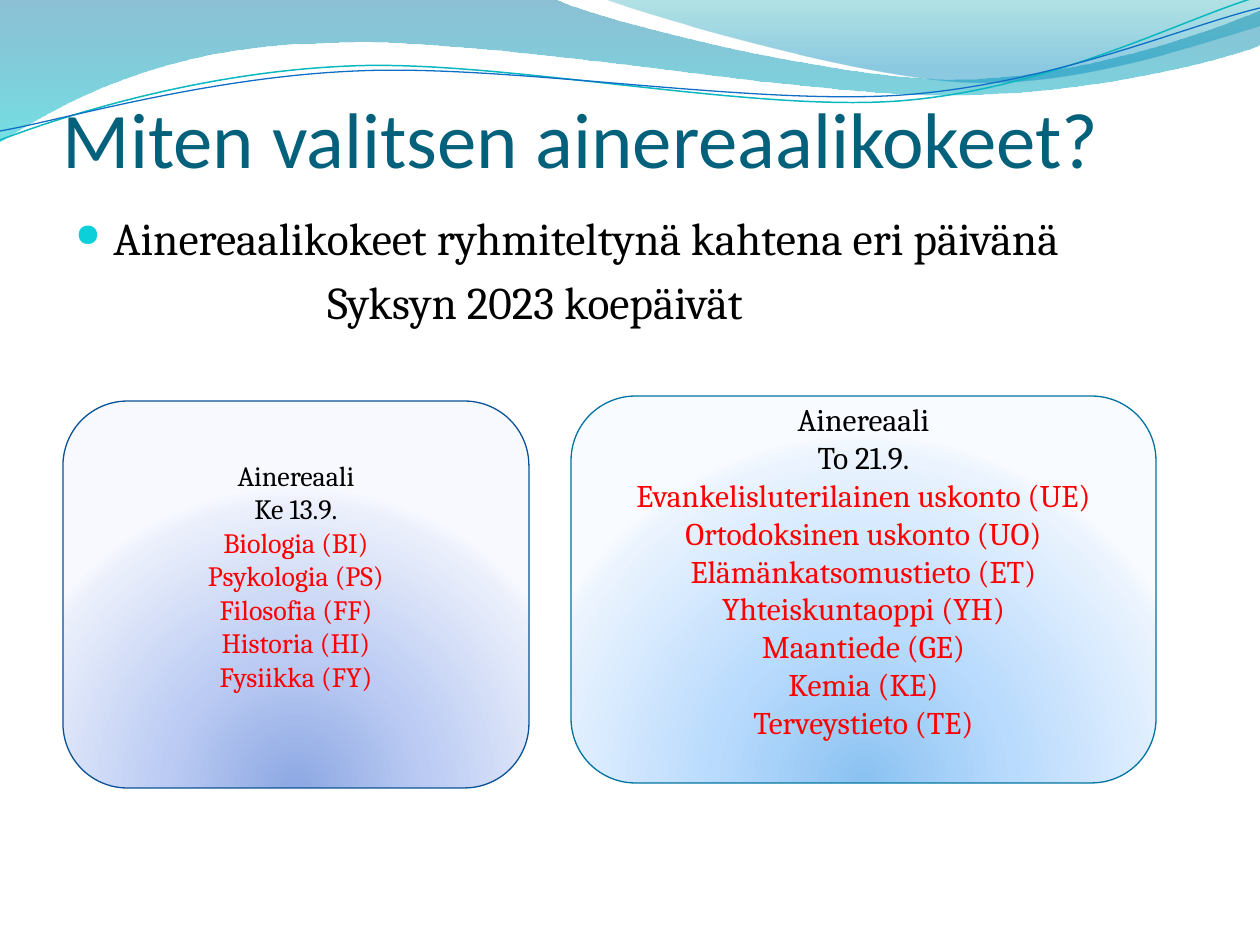
from lxml.etree import SubElement
from pptx import Presentation
from pptx.dml.color import RGBColor as RGB
from pptx.enum.shapes import MSO_SHAPE as SHAPE
from pptx.enum.text import MSO_ANCHOR as ANCHOR, PP_ALIGN as ALIGN
from pptx.oxml import parse_xml
from pptx.oxml.ns import nsdecls, qn
from pptx.util import Pt

PX = 914400 / 126

BLACK = RGB(0x00, 0x00, 0x00)
RED = RGB(0xFF, 0x00, 0x00)
TEAL = RGB(0x04, 0x61, 0x7B)
AQUA = RGB(0x0B, 0xD0, 0xD9)
NAVY = RGB(0x09, 0x52, 0x95)
SEA = RGB(0x00, 0x74, 0xA1)
CYAN = RGB(0x00, 0xC6, 0xCF)
GREEN = RGB(0x00, 0xA1, 0xA9)
BLUE = RGB(0x00, 0x8B, 0xBF)
THREAD_1 = RGB(0x0A, 0xB8, 0xBF)
THREAD_2 = RGB(0x0F, 0x6F, 0xC6)
LILAC = [RGB(0x8D, 0xA8, 0xE3), RGB(0xBB, 0xCB, 0xF3),
         RGB(0xEA, 0xEF, 0xFB), RGB(0xF7, 0xF9, 0xFF)]
SKY = [RGB(0x8B, 0xC2, 0xF1), RGB(0xB9, 0xDB, 0xFD),
       RGB(0xEA, 0xF3, 0xFE), RGB(0xF8, 0xFB, 0xFF)]

TITLE = "Miten valitsen ainereaalikokeet?"
BULLET = "Ainereaalikokeet ryhmiteltynä kahtena eri päivänä"
DATES = "Syksyn 2023 koepäivät"

# Outlines: a pair is a straight step, six numbers are a Bezier curve.
# Gradient stops: position %, colour, opacity %.
WAVES = [
    ([(0, 0), (554, -1), (600, 21, 837, 79, 955, 79),
      (1075, 79, 1207, 33, 1260, 11), (1261, 45),
      (1239, 55, 1096, 96, 940, 95), (784, 94, 481, 35, 324, 43),
      (163, 45, 58, 105, -1, 142)],
     [(0, SEA, 45), (100, CYAN, 55)]),
    ([(604, -1), (641, 14, 859, 78, 969, 82),
      (1079, 87, 1211, 40, 1260, 26), (1260, 0)],
     [(0, GREEN, 30), (80, BLUE, 45)]),
]
THREADS = [
    ([(0, 140), (60, 117, 199, 72, 349, 66), (498, 59, 747, 112, 898, 101),
      (1049, 90, 1182, 19, 1257, -3)], THREAD_1, 0.85),
    ([(0, 131), (59, 121, 207, 77, 357, 71), (508, 64, 752, 106, 903, 95),
      (1053, 84, 1185, 26, 1260, 8)], THREAD_2, 0.75),
]
CARDS = [
    ((571, 396, 585, 387), SKY, SEA, 18, ["Ainereaali", "To 21.9."],
     ["Evankelisluterilainen uskonto (UE)", "Ortodoksinen uskonto (UO)",
      "Elämänkatsomustieto (ET)", "Yhteiskuntaoppi (YH)", "Maantiede (GE)",
      "Kemia (KE)", "Terveystieto (TE)"]),
    ((63, 401, 466, 387), LILAC, NAVY, 16, ["Ainereaali", "Ke 13.9."],
     ["Biologia (BI)", "Psykologia (PS)", "Filosofia (FF)",
      "Historia (HI)", "Fysiikka (FY)"]),
]
LINEAR = '<a:lin ang="5400000" scaled="0"/>'
GLOW = ('<a:path path="circle"><a:fillToRect l="50000" t="130000" '
        'r="50000" b="-30000"/></a:path>')


def emu(*nums):
    return [round(n * PX) for n in nums]


def draw(slide, steps, close):
    """Join the steps' end points, then bend the curved ones."""
    ends = [tuple(emu(*step[-2:])) for step in steps]
    pen = slide.shapes.build_freeform(*ends[0])
    pen.add_line_segments(ends[1:], close=close)
    shape = pen.convert_to_shape()
    shape.shadow.inherit = False
    shape.fill.background()
    sides = list(shape._element.iter(qn("a:lnTo")))
    for side, step in zip(sides, steps[1:]):
        if len(step) == 2:
            continue
        side.tag = qn("a:cubicBezTo")
        end = side[0]
        for i in (0, 2):
            x, y = emu(*step[i:i + 2])
            end.addprevious(parse_xml(
                f'<a:pt {nsdecls("a")} x="{x - shape.left}" '
                f'y="{y - shape.top}"/>'))
    return shape


def shade(shape, stops, kind):
    """Give the shape a gradient fill with opacity."""
    marks = "".join(
        f'<a:gs pos="{pos * 1000}"><a:srgbClr val="{color}">'
        f'<a:alpha val="{alpha * 1000}"/></a:srgbClr></a:gs>'
        for pos, color, alpha in stops)
    shape.fill.background()
    props = shape._element.spPr
    props.replace(props.find(qn("a:noFill")), parse_xml(
        f'<a:gradFill {nsdecls("a")} rotWithShape="1">'
        f'<a:gsLst>{marks}</a:gsLst>{kind}</a:gradFill>'))


def write(para, text, face, size, color):
    para.text = text
    font = para.font
    font.name, font.size, font.color.rgb = face, Pt(size), color


def add_text(slide, box):
    frame = slide.shapes.add_textbox(*emu(*box)).text_frame
    frame.word_wrap = True
    return frame


def indent(para, left, first=0):
    props = para._p.get_or_add_pPr()
    props.set("marL", str(emu(left)[0]))
    props.set("indent", str(emu(first)[0]))
    return props


def add_bullet(para, color):
    props = indent(para, 38, -38)
    tint = SubElement(props, qn("a:buClr"))
    SubElement(tint, qn("a:srgbClr"), val=str(color))
    SubElement(props, qn("a:buSzPct"), val="70000")
    SubElement(props, qn("a:buChar"), char="●")


def add_card(slide, box, tints, edge, size, head, exams):
    card = slide.shapes.add_shape(SHAPE.ROUNDED_RECTANGLE, *emu(*box))
    card.shadow.inherit = False
    shade(card, [(pos, tint, 100) for pos, tint in zip((0, 43, 93, 100), tints)],
          GLOW)
    card.line.color.rgb, card.line.width = edge, Pt(0.75)
    frame = card.text_frame
    frame.word_wrap = True
    frame.vertical_anchor = ANCHOR.MIDDLE
    frame.margin_bottom = emu(44)[0]
    for i, text in enumerate(head + exams):
        para = frame.add_paragraph() if i else frame.paragraphs[0]
        para.alignment = ALIGN.CENTER
        write(para, text, "Cambria", size, BLACK if i < len(head) else RED)


def main():
    deck = Presentation()
    deck.slide_width, deck.slide_height = emu(1260, 945)
    slide = deck.slides.add_slide(deck.slide_layouts[6])

    for steps, stops in WAVES:
        wave = draw(slide, steps, True)
        shade(wave, stops, LINEAR)
        wave.line.fill.background()
    for steps, color, width in THREADS:
        line = draw(slide, steps, False).line
        line.color.rgb, line.width = color, Pt(width)

    title = add_text(slide, (63, 96, 1134, 88))
    title.vertical_anchor = ANCHOR.BOTTOM
    title.margin_left = title.margin_right = title.margin_bottom = 0
    write(title.paragraphs[0], TITLE, "Calibri", 45, TEAL)

    body = add_text(slide, (63, 204, 1134, 667))
    paras = body.paragraphs[0], body.add_paragraph()
    for para, text in zip(paras, (BULLET, DATES)):
        write(para, text, "Cambria", 26, BLACK)
        para.space_before = Pt(5.2)
    add_bullet(paras[0], AQUA)
    indent(paras[1], 252)

    for card in CARDS:
        add_card(slide, *card)
    deck.save("out.pptx")


if __name__ == "__main__":
    main()
